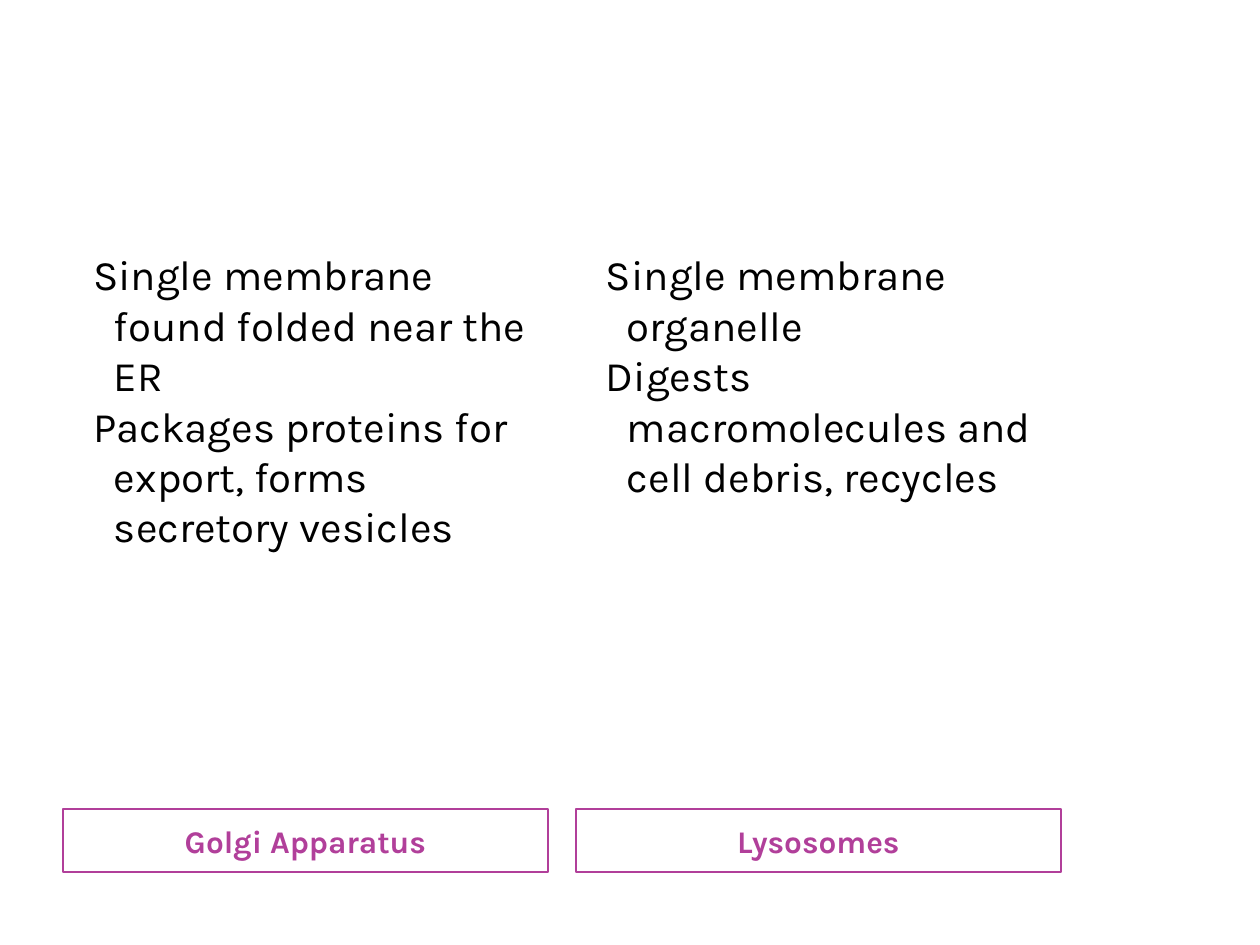
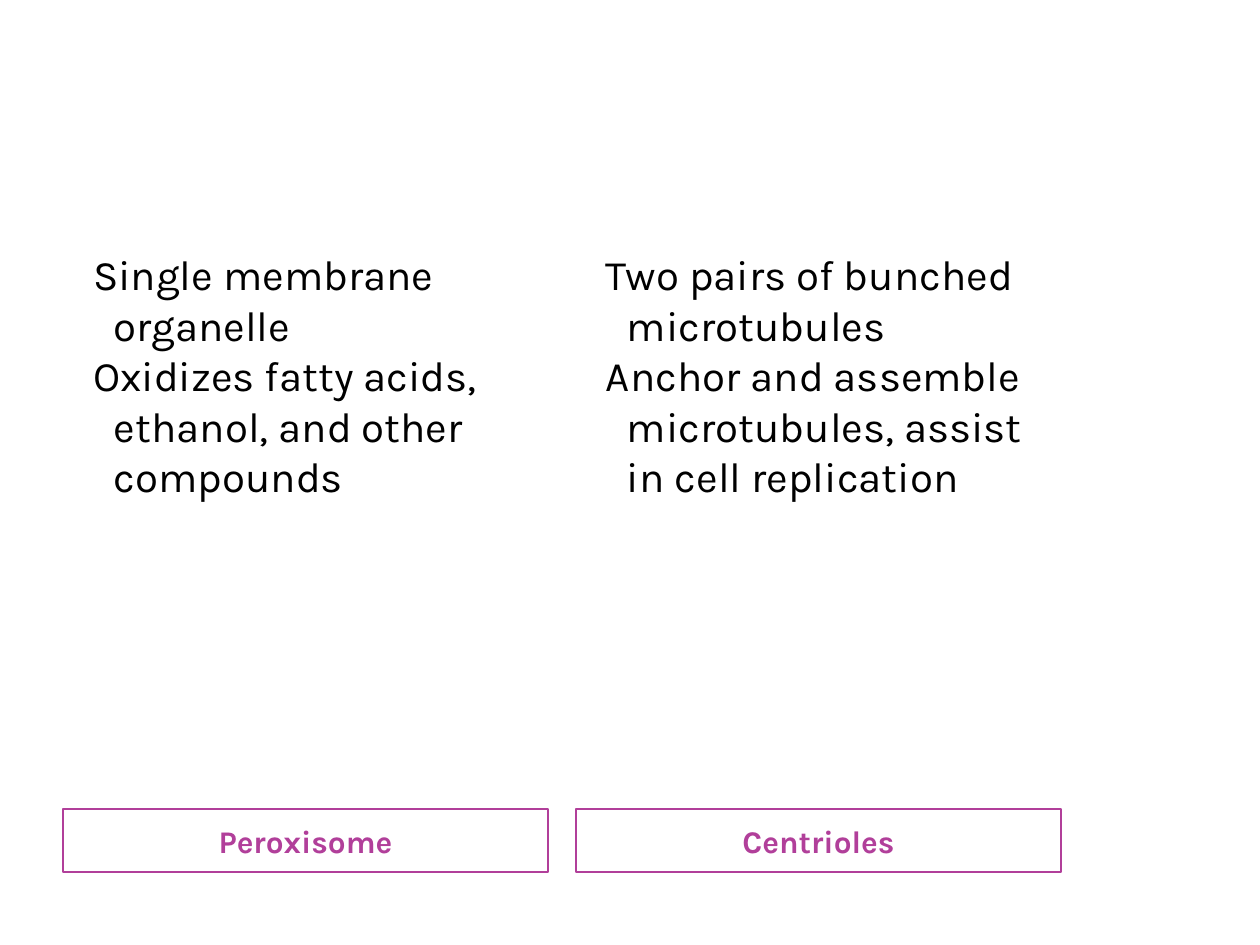
import pptx
import pptx.util
import pptx.dml.color
import pptx.enum.shapes
import pptx.enum.text

# Content: each slide compares two organelles
SLIDES = [
    [
        ("Golgi Apparatus", [
            "Single membrane found folded near the ER",
            "Packages proteins for export, forms secretory vesicles",
        ]),
        ("Lysosomes", [
            "Single membrane organelle",
            "Digests macromolecules and cell debris, recycles",
        ]),
    ],
    [
        ("Peroxisome", [
            "Single membrane organelle",
            "Oxidizes fatty acids, ethanol, and other compounds",
        ]),
        ("Centrioles", [
            "Two pairs of bunched microtubules",
            "Anchor and assemble microtubules, assist in cell replication",
        ]),
    ],
]

# Shared style
COLORS = {"heading": "B13F9A", "body": "000000"}
HEADING_FONT = {"name": "Karla", "size": pptx.util.Pt(18), "bold": True}
BODY_FONT = {"name": "Karla", "size": pptx.util.Pt(24), "bold": False}

# Geometry in px
PX = pptx.util.Inches(1) // 126
PAGE_WIDTH, PAGE_HEIGHT = 1260, 945
LEFT, COLUMN_WIDTH, COLUMN_GAP = 63, 485, 28
BODY_TOP, BODY_HEIGHT = 236, 567
HEADING_TOP, HEADING_HEIGHT = 809, 63
INSET, HANGING_LEFT, HANGING_FIRST = 13, 38, -21


def color(name):
    return pptx.dml.color.RGBColor.from_string(COLORS[name])


def set_values(target, values):
    for name, value in values.items():
        setattr(target, name, value)


def write(box, lines, font, color_name, alignment, anchor):
    frame = box.text_frame
    set_values(frame, {"word_wrap": True, "vertical_anchor": anchor})
    for side in ("left", "top", "right", "bottom"):
        setattr(frame, f"margin_{side}", INSET * PX)
    frame.text = "\n".join(lines)
    for para in frame.paragraphs:
        para.alignment = alignment
        for span in para.runs:
            set_values(span.font, font)
            span.font.color.rgb = color(color_name)


def add_heading(page, left, heading):
    box = page.shapes.add_shape(
        pptx.enum.shapes.MSO_SHAPE.RECTANGLE,
        left * PX, HEADING_TOP * PX, COLUMN_WIDTH * PX, HEADING_HEIGHT * PX)
    box.shadow.inherit = False
    box.fill.background()
    box.line.color.rgb = color("heading")
    box.line.width = pptx.util.Pt(1)
    write(box, [heading], HEADING_FONT, "heading",
          pptx.enum.text.PP_ALIGN.CENTER, pptx.enum.text.MSO_ANCHOR.MIDDLE)


def add_facts(page, left, facts):
    box = page.shapes.add_textbox(
        left * PX, BODY_TOP * PX, COLUMN_WIDTH * PX, BODY_HEIGHT * PX)
    write(box, facts, BODY_FONT, "body",
          pptx.enum.text.PP_ALIGN.LEFT, pptx.enum.text.MSO_ANCHOR.TOP)
    # Hanging indent
    for para in box.text_frame.paragraphs:
        properties = para._p.get_or_add_pPr()
        properties.set("marL", str(HANGING_LEFT * PX))
        properties.set("indent", str(HANGING_FIRST * PX))


def main():
    deck = pptx.Presentation()
    deck.slide_width = PAGE_WIDTH * PX
    deck.slide_height = PAGE_HEIGHT * PX
    blank_layout = deck.slide_layouts[6]
    for organelles in SLIDES:
        page = deck.slides.add_slide(blank_layout)
        for column, (heading, facts) in enumerate(organelles):
            left = LEFT + column * (COLUMN_WIDTH + COLUMN_GAP)
            add_heading(page, left, heading)
            add_facts(page, left, facts)
    deck.save("out.pptx")


if __name__ == "__main__":
    main()
